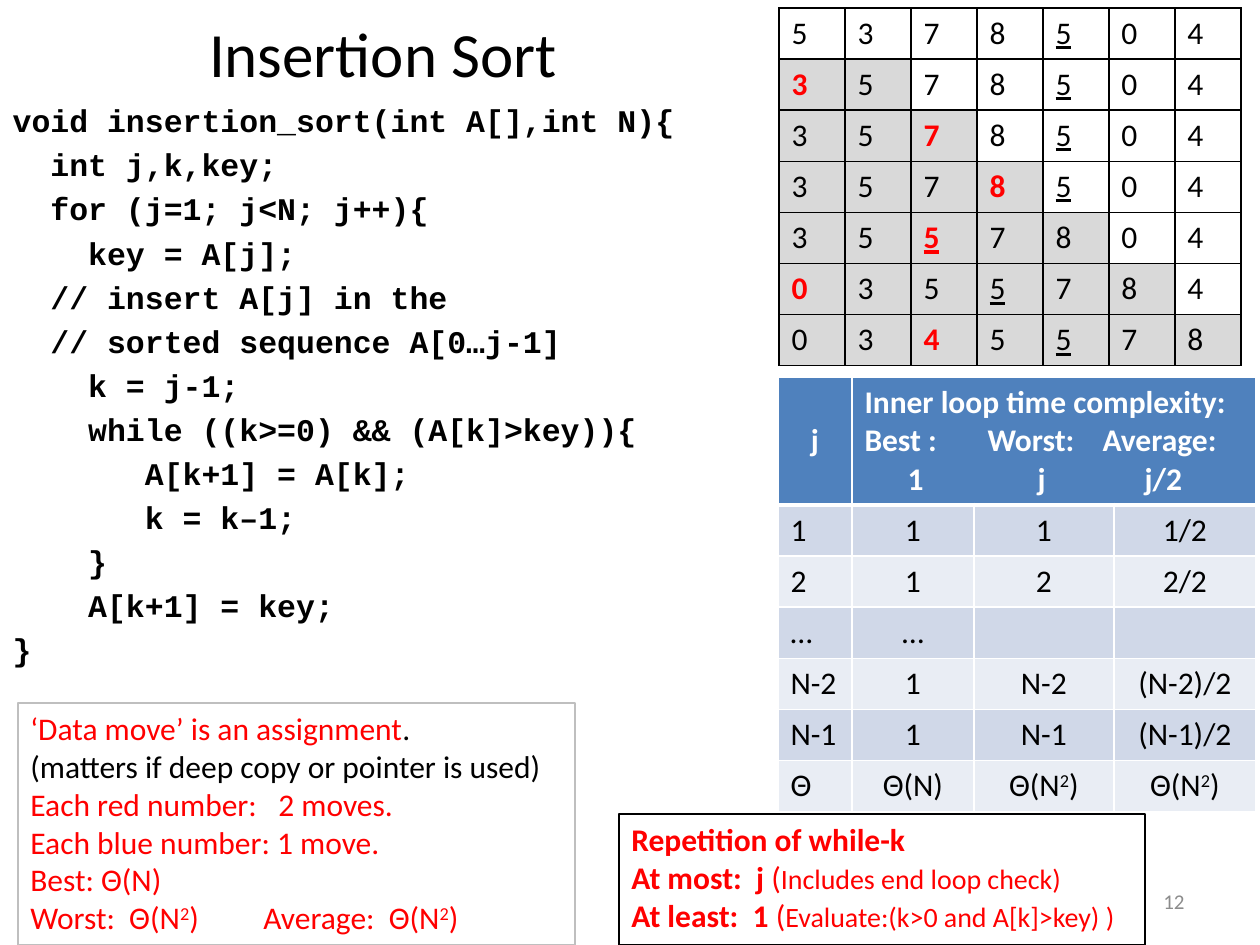
import dataclasses

import lxml.etree
import pptx
import pptx.dml.color
import pptx.enum.shapes
import pptx.enum.text
import pptx.oxml.ns
import pptx.util

ALIGN = pptx.enum.text.PP_ALIGN
ANCHOR = pptx.enum.text.MSO_ANCHOR
qn = pptx.oxml.ns.qn


@dataclasses.dataclass(frozen=True)
class Theme:
    font: str = "Calibri"
    code_font: str = "Courier New"
    black: str = "000000"
    white: str = "FFFFFF"
    red: str = "FF0000"
    muted: str = "8C8C8C"
    frame: str = "BFBFBF"
    sorted_fill: str = "D9D9D9"
    header_fill: str = "4F81BD"
    bands: tuple = ("D0D8E8", "E9EDF4")
    title_size: int = 36
    text_size: int = 18
    small_size: int = 16
    number_size: int = 12


@dataclasses.dataclass
class Line:
    """A paragraph: (text, format) runs and tab stops in px."""
    runs: list
    tabs: tuple = ()


def px(length):
    return pptx.util.Emu(round(length * 914400 / 126))


def rgb(value):
    return pptx.dml.color.RGBColor.from_string(value)


def line(text, *tabs, **style):
    return Line([(text, style)], tabs)


def squared(before, after, **style):
    """Runs for text with a raised 2 in it."""
    return [(before, style), ("2", {**style, "raised": True}), (after, style)]


class SlideBuilder:
    def __init__(self, presentation, theme):
        self.theme = theme
        self.slide = presentation.slides.add_slide(presentation.slide_layouts[1])

    def add_lines(self, frame, lines, align=ALIGN.LEFT, **style):
        base = dict(name=self.theme.font, size=self.theme.text_size,
                    color=self.theme.black, bold=False) | style
        for index, content in enumerate(lines):
            paragraph = frame.paragraphs[0] if index == 0 else frame.add_paragraph()
            paragraph.alignment = align
            if content.tabs:
                properties = paragraph._p.get_or_add_pPr()
                stops = lxml.etree.SubElement(properties, qn("a:tabLst"))
                for stop in content.tabs:
                    lxml.etree.SubElement(stops, qn("a:tab"), pos=str(px(stop)), algn="l")
            for text, run_style in content.runs:
                run = paragraph.add_run()
                run.text = text
                values = base | run_style
                values["size"] = pptx.util.Pt(values["size"])
                run.font.color.rgb = rgb(values.pop("color"))
                if values.pop("raised", False):
                    run._r.get_or_add_rPr().set("baseline", "30000")
                for name, value in values.items():
                    setattr(run.font, name, value)

    def place(self, shape, box, **frame_format):
        names = ("left", "top", "width", "height")
        for name, value in zip(names, box):
            setattr(shape, name, px(value))
        settings = dict(word_wrap=True, auto_size=pptx.enum.text.MSO_AUTO_SIZE.NONE)
        for name, value in (settings | frame_format).items():
            setattr(shape.text_frame, name, value)
        return shape.text_frame

    def title(self, box, text):
        frame = self.place(self.slide.shapes.title, box, vertical_anchor=ANCHOR.MIDDLE)
        self.add_lines(frame, [line(text)], ALIGN.CENTER, size=self.theme.title_size)

    def code(self, box, text):
        frame = self.place(self.slide.placeholders[1], box)
        self.add_lines(frame, [line(row) for row in text.splitlines()],
                       name=self.theme.code_font, bold=True)
        for paragraph in frame.paragraphs:
            properties = paragraph._p.get_or_add_pPr()
            properties.set("marL", "0")
            properties.set("indent", "0")
            lxml.etree.SubElement(properties, qn("a:buNone"))

    def label(self, box, text, align, **style):
        shape = self.slide.shapes.add_textbox(*map(px, box))
        frame = self.place(shape, box, vertical_anchor=ANCHOR.MIDDLE)
        self.add_lines(frame, [line(text)], align, **style)

    def note(self, box, outline, lines, **style):
        kind = pptx.enum.shapes.MSO_SHAPE.RECTANGLE
        shape = self.slide.shapes.add_shape(kind, *map(px, box))
        shape.shadow.inherit = False
        shape.fill.background()
        shape.line.color.rgb = rgb(outline)
        shape.line.width = pptx.util.Pt(0.75)
        self.add_lines(self.place(shape, box, vertical_anchor=ANCHOR.TOP), lines, **style)

    def table(self, left, top, columns, rows):
        shape = self.slide.shapes.add_table(
            len(rows), len(columns), px(left), px(top), px(sum(columns)), px(sum(rows)))
        table = shape.table
        table.first_row = table.horz_banding = False
        for column, width in zip(table.columns, columns):
            column.width = px(width)
        for row, height in zip(table.rows, rows):
            row.height = px(height)
        return table

    def cell(self, cell, lines, fill, border, align=ALIGN.LEFT, bottom=1, **style):
        self.add_lines(cell.text_frame, lines, align, **style)
        properties = cell._tc.get_or_add_tcPr()
        for side, width in dict(lnL=1, lnR=1, lnT=1, lnB=bottom).items():
            edge = lxml.etree.SubElement(properties, qn("a:" + side),
                                         w=str(pptx.util.Pt(width)))
            solid = lxml.etree.SubElement(edge, qn("a:solidFill"))
            lxml.etree.SubElement(solid, qn("a:srgbClr"), val=border)
        if fill:
            cell.fill.solid()
            cell.fill.fore_color.rgb = rgb(fill)
        else:
            cell.fill.background()


CODE = """void insertion_sort(int A[],int N){
  int j,k,key;
  for (j=1; j<N; j++){
    key = A[j];
  // insert A[j] in the
  // sorted sequence A[0…j-1]
    k = j-1;
    while ((k>=0) && (A[k]>key)){
       A[k+1] = A[k];
       k = k–1;
    }
    A[k+1] = key;
}"""


def add_trace(builder, theme):
    """One row per pass: sorted part shaded, inserted key in red."""
    numbers = [(value, index == 4) for index, value in enumerate((5, 3, 7, 8, 5, 0, 4))]
    count = len(numbers)
    table = builder.table(779, 8, [66] * count, [51] * count)
    for done in range(count):
        place = None
        if done:
            key = numbers.pop(done)
            place = sum(value <= key[0] for value, _ in numbers[:done])
            numbers.insert(place, key)
        for column, (value, second) in enumerate(numbers):
            style = dict(color=theme.red, bold=True) if column == place else {}
            fill = theme.sorted_fill if done and column <= done else None
            builder.cell(table.cell(done, column), [line(str(value), underline=second)],
                         fill, theme.black, **style)


def add_complexity(builder, theme):
    table = builder.table(778, 377, [74, 122, 140, 142], [127] + [51] * 6)
    header = dict(fill=theme.header_fill, border=theme.white, bottom=3,
                  color=theme.white, bold=True)
    table.cell(0, 1).merge(table.cell(0, 3))
    table.cell(0, 0).vertical_anchor = ANCHOR.MIDDLE
    builder.cell(table.cell(0, 0), [line("j")], align=ALIGN.CENTER, **header)
    builder.cell(table.cell(0, 1), [
        line("Inner loop time complexity:"),
        line("Best :\tWorst:\tAverage:", 123, 238),
        line("\t1\tj\tj/2", 43, 173, 280)], **header)
    quadratic = Line(squared("Θ(N", ")"))
    rows = [[line(text) for text in (j, "1", j, f"{term}/2")]
            for j, term in (("1", "1"), ("2", "2"), ("N-2", "(N-2)"), ("N-1", "(N-1)"))]
    rows.insert(2, [line("…"), line("…"), None, None])
    rows.append([line("Θ"), line("Θ(N)"), quadratic, quadratic])
    for row, contents in enumerate(rows, 1):
        for column, content in enumerate(contents):
            builder.cell(table.cell(row, column), [content] if content else [],
                         theme.bands[(row - 1) % 2], theme.white,
                         ALIGN.CENTER if column else ALIGN.LEFT)


def main():
    theme = Theme()
    presentation = pptx.Presentation()
    presentation.slide_width, presentation.slide_height = px(1260), px(945)
    builder = SlideBuilder(presentation, theme)

    # Title, code and slide number
    builder.title((20, 10, 726, 84), "Insertion Sort")
    builder.code((0, 95, 719, 601), CODE)
    builder.label((903, 876, 294, 50), "12", ALIGN.RIGHT,
                  size=theme.number_size, color=theme.muted)

    # Tables
    add_complexity(builder, theme)
    add_trace(builder, theme)

    # Notes
    bold, small = dict(bold=True), dict(size=theme.small_size)
    builder.note((619, 814, 526, 131), theme.black, [
        line("Repetition of while-k", **bold),
        Line([("At most:  j ", bold), ("(", {}), ("Includes end loop check)", small)]),
        Line([("At least:  1 ", bold), ("(", {}), ("Evaluate:(k>0 and A[k]>key) )", small)]),
    ], color=theme.red)
    black = dict(color=theme.black)
    builder.note((18, 703, 557, 242), theme.frame, [
        Line([("‘Data move’ is an assignment", {}), (".", black)]),
        line("(matters if deep copy or pointer is used)", **black),
        line("Each red number:\t2 moves.", 248),
        line("Each blue number: 1 move."),
        line("Best: Θ(N)"),
        Line(squared("Worst:  Θ(N", ")\t") + squared("Average:  Θ(N", ")"), (233,)),
    ], color=theme.red)

    presentation.save("out.pptx")


if __name__ == "__main__":
    main()
